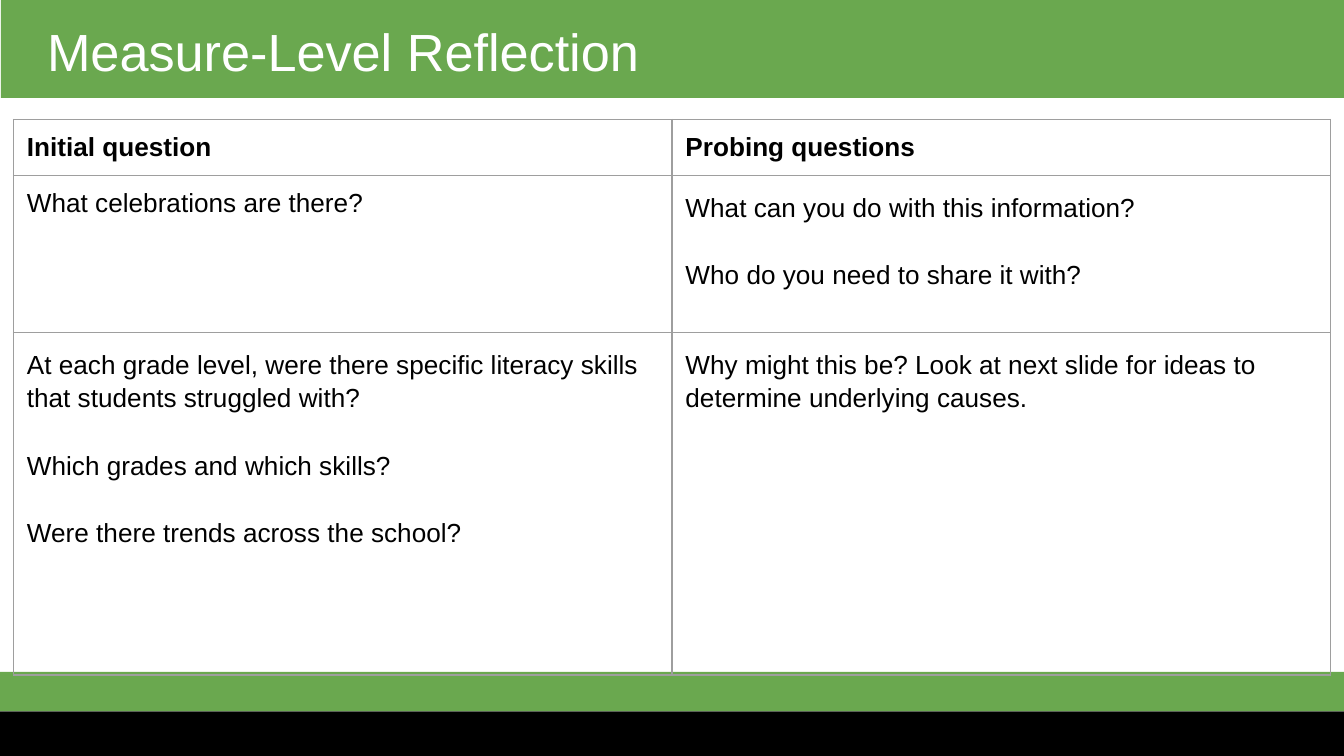
import pptx
import pptx.util
import pptx.dml.color
import pptx.enum.shapes
import pptx.enum.text
import pptx.oxml
import pptx.oxml.ns

Pt = pptx.util.Pt
GREEN = "6AA84F"
BARS = [
    (-0.5, 381, 721, 24.5, "000000", "595959"),
    (-0.5, 360, 721, 21, GREEN, None),
    (0.5, 0, 719.5, 52.5, GREEN, None),
]
ROWS = [
    (30, [["Initial question"], ["Probing questions"]]),
    (84, [
        ["What celebrations are there?"],
        ["What can you do with this information?",
         "Who do you need to share it with?"],
    ]),
    (183.5, [
        ["At each grade level, were there specific literacy skills "
         "that students struggled with?",
         "Which grades and which skills?",
         "Were there trends across the school?"],
        ["Why might this be? Look at next slide for ideas to "
         "determine underlying causes."],
    ]),
]
PAD = {"margin_left": Pt(7.2), "margin_right": Pt(7.2),
       "margin_top": Pt(7.2), "margin_bottom": Pt(7.2)}


def tint(code):
    return pptx.dml.color.RGBColor.from_string(code)


def style(item, vals):
    for key, val in vals.items():
        setattr(item, key, val)


def write(frame, texts, color, font, para):
    for i, text in enumerate(texts):
        line = frame.paragraphs[0] if i == 0 else frame.add_paragraph()
        line.text = text
        style(line, para)
        if i:
            line.space_before = Pt(18)
        style(line.runs[0].font, {"name": "Arial", **font})
        line.runs[0].font.color.rgb = tint(color)


def bar(slide, left, top, width, height, fill, edge):
    rect = slide.shapes.add_shape(
        pptx.enum.shapes.MSO_SHAPE.RECTANGLE,
        Pt(left), Pt(top), Pt(width), Pt(height))
    rect.shadow.inherit = False
    rect.fill.solid()
    rect.fill.fore_color.rgb = tint(fill)
    if edge:
        rect.line.color.rgb = tint(edge)
        rect.line.width = Pt(0.75)
    else:
        rect.line.fill.background()


def title(slide, text):
    box = slide.shapes.title
    style(box, {"left": Pt(18), "top": Pt(0),
                "width": Pt(671), "height": Pt(45.5)})
    style(box.text_frame, {
        **PAD, "margin_top": Pt(10.5), "word_wrap": True,
        "auto_size": pptx.enum.text.MSO_AUTO_SIZE.NONE,
        "vertical_anchor": pptx.enum.text.MSO_ANCHOR.TOP})
    write(box.text_frame, [text], "FFFFFF", {"size": Pt(28)},
          {"alignment": pptx.enum.text.PP_ALIGN.LEFT})
    slide.shapes._spTree.append(box._element)


def border(cell, color):
    props = cell._tc.get_or_add_tcPr()
    for i, side in enumerate(("lnL", "lnR", "lnT", "lnB")):
        props.insert(i, pptx.oxml.parse_xml(
            f'<a:{side} {pptx.oxml.ns.nsdecls("a")} w="{Pt(0.75)}">'
            f'<a:solidFill><a:srgbClr val="{color}"/></a:solidFill>'
            f'</a:{side}>'))


def table(slide, rows):
    wide = 352.8
    high = sum(row[0] for row in rows)
    grid = slide.shapes.add_table(
        len(rows), 2, Pt(7.2), Pt(64), Pt(2 * wide), Pt(high)).table
    style(grid, {"first_row": False, "horz_banding": False})
    for col in grid.columns:
        col.width = Pt(wide)
    for r, (tall, cells) in enumerate(rows):
        grid.rows[r].height = Pt(tall)
        for c, texts in enumerate(cells):
            cell = grid.cell(r, c)
            style(cell, PAD)
            cell.fill.background()
            border(cell, "9E9E9E")
            loose = r == 2 or (r, c) == (1, 1)
            write(cell.text_frame, texts, "000000",
                  {"size": Pt(14), "bold": r == 0},
                  {"line_spacing": 1.15 if loose else 1.0})


def main():
    deck = pptx.Presentation()
    style(deck, {"slide_width": Pt(720), "slide_height": Pt(405)})
    slide = deck.slides.add_slide(deck.slide_layouts[5])
    for item in BARS:
        bar(slide, *item)
    title(slide, "Measure-Level Reflection")
    table(slide, ROWS)
    deck.save("out.pptx")


if __name__ == "__main__":
    main()
